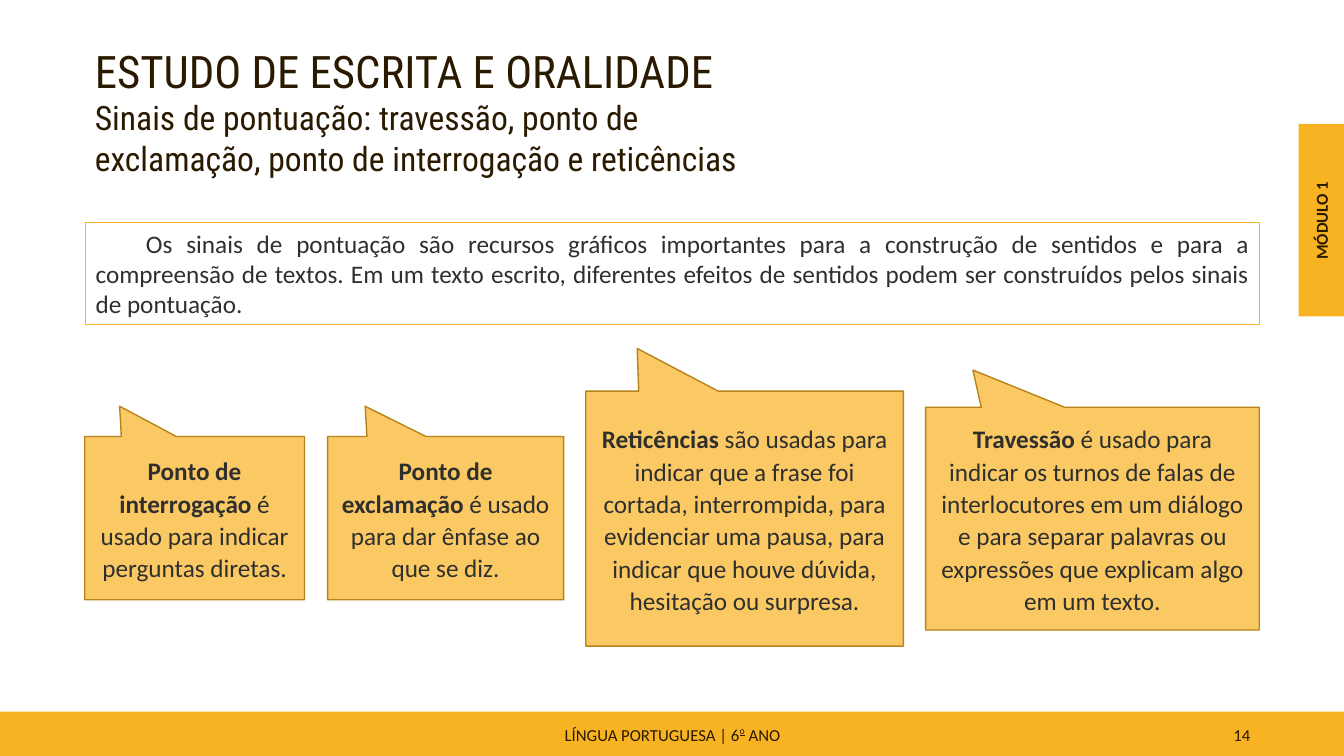
from dataclasses import dataclass

from lxml.etree import SubElement
from pptx import Presentation
from pptx.dml.color import RGBColor
from pptx.enum.shapes import MSO_SHAPE as SHAPE
from pptx.enum.text import MSO_ANCHOR as ANCHOR, MSO_AUTO_SIZE as AUTO, PP_ALIGN as ALIGN
from pptx.oxml.ns import qn
from pptx.util import Pt

PX = 9144
AMBER, OCHRE, BROWN, GRAY = "F8B323", "B7841A", "2A1A00", "2F2F2E"
BODY, HEADING = "Calibri", "Roboto Condensed"


@dataclass
class Callout:
    left: int
    top: int
    width: int
    height: int
    tip_x: float
    tip_y: float
    term: str
    meaning: str


CALLOUTS = [
    Callout(84, 433, 218, 162, -0.341, -0.685, "Ponto de interrogação",
            " é usado para indicar perguntas diretas."),
    Callout(325, 433, 234, 162, -0.341, -0.685, "Ponto de exclamação",
            " é usado para dar ênfase ao que se diz."),
    Callout(581, 388, 315, 253, -0.338, -0.667, "Reticências",
            " são usadas para indicar que a frase foi cortada, interrompida, para evidenciar "
            "uma pausa, para indicar que houve dúvida, hesitação ou surpresa."),
    Callout(918, 404, 331, 221, -0.358, -0.667, "Travessão",
            " é usado para indicar os turnos de falas de interlocutores em um diálogo e para "
            "separar palavras ou expressões que explicam algo em um texto."),
]


def px(n: int) -> int:
    return n * PX


def box(*lengths: int) -> list[int]:
    return [px(n) for n in lengths]


def paint(color_format, color: str) -> None:
    color_format.rgb = RGBColor.from_string(color)


def style(r, size: int, color: str, font: str = BODY, bold: bool = False) -> None:
    r.font.size, r.font.name, r.font.bold = Pt(size), font, bold
    paint(r.font.color, color)


def add_shape(slide, kind, bounds: list[int], fill: str = "", line: str = "", weight: float = 1):
    s = slide.shapes.add_shape(kind, *bounds)
    s.shadow.inherit = False
    if fill:
        s.fill.solid()
        paint(s.fill.fore_color, fill)
    else:
        s.fill.background()
    if line:
        paint(s.line.color, line)
        s.line.width = Pt(weight)
    else:
        s.line.fill.background()
    return s


def write(s, pieces: list[str], align, size: int, color: str, anchor=ANCHOR.MIDDLE):
    tf = s.text_frame
    tf.word_wrap = True
    tf.vertical_anchor = anchor
    p = tf.paragraphs[0]
    p.alignment = align
    for piece in pieces:
        r = p.add_run()
        r.text = piece
        style(r, size, color)
    return p


def add_label(slide, bounds: list[int], pieces: list[str], align, anchor=ANCHOR.MIDDLE):
    s = slide.shapes.add_textbox(*bounds)
    return s, write(s, pieces, align, 12, BROWN, anchor)


def add_title(slide) -> None:
    s = slide.shapes.title
    s.left, s.top, s.width, s.height = box(84, 38, 698, 145)
    tf = s.text_frame
    tf.text = ("ESTUDO DE ESCRITA E ORALIDADE\n"
               "Sinais de pontuação: travessão, ponto de exclamação, "
               "ponto de interrogação e reticências")
    tf.word_wrap = True
    tf.auto_size = AUTO.NONE
    tf.vertical_anchor = ANCHOR.TOP
    for p, size in zip(tf.paragraphs, (32, 24)):
        p.alignment = ALIGN.LEFT
        p.space_before = Pt(0)
        style(p.runs[0], size, BROWN, HEADING)


def add_intro(slide) -> None:
    s = add_shape(slide, SHAPE.RECTANGLE, box(85, 221, 1164, 101), line=AMBER, weight=0.75)
    p = write(s, ["Os sinais de pontuação são recursos gráficos importantes para a construção "
                  "de sentidos e para a compreensão de textos. Em um texto escrito, diferentes "
                  "efeitos de sentidos podem ser construídos pelos sinais de pontuação."],
              ALIGN.JUSTIFY, 18, GRAY)
    pPr = p._p.get_or_add_pPr()
    pPr.set("marL", "0")
    pPr.set("indent", str(px(50)))


def add_callout(slide, c: Callout) -> None:
    s = add_shape(slide, SHAPE.RECTANGULAR_CALLOUT,
                  box(c.left, c.top, c.width, c.height), AMBER, OCHRE)
    s.adjustments[0], s.adjustments[1] = c.tip_x, c.tip_y
    fill_color = s._element.spPr.find(qn("a:solidFill"))[0]
    SubElement(fill_color, qn("a:alpha")).set("val", "70000")
    p = write(s, [c.term, c.meaning], ALIGN.CENTER, 18, GRAY)
    p.line_spacing = 1.07
    p.space_after = Pt(8)
    p.runs[0].font.bold = True


def add_footer(slide) -> None:
    add_shape(slide, SHAPE.RECTANGLE, box(0, 706, 1333, 45), AMBER)
    _, number = add_label(slide, box(942, 710, 308, 38), ["14"], ALIGN.RIGHT)
    _, course = add_label(slide, box(442, 710, 450, 38),
                          ["LÍNGUA PORTUGUESA | 6", "o", " ANO"], ALIGN.CENTER)
    for p in (number, course):
        p.space_after = Pt(6)
    ordinal = course.runs[1].font
    ordinal.underline = True
    ordinal._element.set("baseline", "45000")


def add_module_tab(slide) -> None:
    add_shape(slide, SHAPE.RECTANGLE, box(1288, 123, 45, 191), AMBER)
    s, p = add_label(slide, box(1215, 204, 191, 30), ["MÓDULO 1"], ALIGN.CENTER, ANCHOR.TOP)
    s.rotation = 270
    p.runs[0].font.bold = True


def main() -> None:
    prs = Presentation()
    prs.slide_width, prs.slide_height = box(1333, 750)
    slide = prs.slides.add_slide(prs.slide_layouts[5])
    add_footer(slide)
    add_module_tab(slide)
    add_title(slide)
    add_intro(slide)
    for c in CALLOUTS:
        add_callout(slide, c)
    prs.save("out.pptx")


if __name__ == "__main__":
    main()
